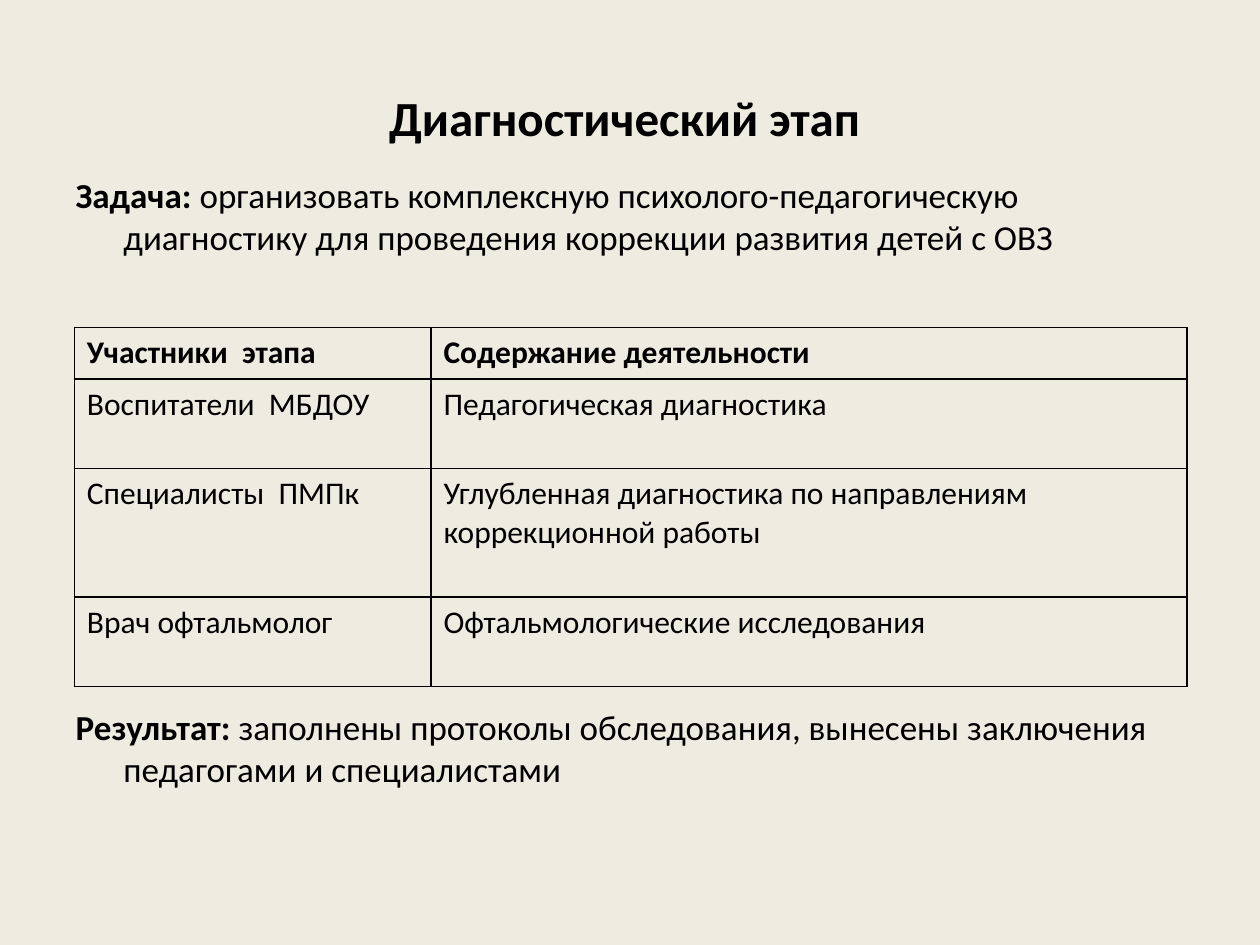
from lxml.etree import SubElement
from pptx import Presentation
from pptx.dml.color import RGBColor
from pptx.enum.text import MSO_ANCHOR, MSO_AUTO_SIZE, PP_ALIGN
from pptx.oxml.ns import qn
from pptx.util import Inches, Pt

INK = RGBColor(0x00, 0x00, 0x00)
PAPER = RGBColor(0xEE, 0xEC, 0xE1)
FONT = "Calibri"

TITLE = "Диагностический этап "
NOTES = [
    ("Задача: ", "организовать комплексную психолого-педагогическую "
     "диагностику для проведения коррекции развития детей с ОВЗ"),
    ("Результат: ", "заполнены протоколы обследования, вынесены заключения "
     "педагогами и специалистами"),
]
ROWS = [
    ("Участники  этапа", "Содержание деятельности"),
    ("Воспитатели  МБДОУ", "Педагогическая диагностика"),
    ("Специалисты  ПМПк",
     "Углубленная диагностика по направлениям коррекционной работы"),
    ("Врач офтальмолог", "Офтальмологические исследования"),
]
WIDTHS = (2.83, 6)
HEIGHTS = (0.41, 0.71, 1.02, 0.71)


def write(para, text, size=18, bold=False):
    """Add a formatted run to a paragraph."""
    run = para.add_run()
    run.text = text
    font = run.font
    font.name, font.size, font.bold = FONT, Pt(size), bold
    font.color.rgb = INK


def place(shape, box):
    shape.left, shape.top, shape.width, shape.height = map(Inches, box)
    frame = shape.text_frame
    frame.word_wrap = True
    frame.auto_size = MSO_AUTO_SIZE.NONE
    return frame


def head(shape, box):
    frame = place(shape, box)
    frame.vertical_anchor = MSO_ANCHOR.MIDDLE
    para = frame.paragraphs[0]
    para.alignment = PP_ALIGN.CENTER
    write(para, TITLE, size=28, bold=True)


def body(shape, box, gap):
    """Task above the table and result below it, with hanging indents."""
    frame = place(shape, box)
    for i, (label, text) in enumerate(NOTES):
        para = frame.add_paragraph() if i else frame.paragraphs[0]
        para.space_before = Pt(gap if i else 4)
        props = para._p.get_or_add_pPr()
        props.set("marL", str(Inches(0.38)))
        props.set("indent", str(-Inches(0.38)))
        SubElement(props, qn("a:buNone"))
        write(para, label, size=20, bold=True)
        write(para, text, size=20)


def border(cell):
    props = cell._tc.get_or_add_tcPr()
    for side in ("lnL", "lnR", "lnT", "lnB"):
        line = SubElement(props, qn("a:" + side), w=str(Pt(1)))
        fill = SubElement(line, qn("a:solidFill"))
        SubElement(fill, qn("a:srgbClr"), val=str(INK))


def grid(slide, left, top):
    size = map(Inches, (left, top, sum(WIDTHS), sum(HEIGHTS)))
    table = slide.shapes.add_table(len(ROWS), len(WIDTHS), *size).table
    table.first_row = table.horz_banding = False
    for col, width in zip(table.columns, WIDTHS):
        col.width = Inches(width)
    for r, (row, height) in enumerate(zip(table.rows, HEIGHTS)):
        row.height = Inches(height)
        for cell, text in zip(row.cells, ROWS[r]):
            border(cell)
            cell.fill.background()
            write(cell.text_frame.paragraphs[0], text, bold=r == 0)


def main():
    deck = Presentation()
    deck.slide_width, deck.slide_height = Inches(10), Inches(7.5)
    slide = deck.slides.add_slide(deck.slide_layouts[1])
    fill = slide.background.fill
    fill.solid()
    fill.fore_color.rgb = PAPER

    # Title, then the two notes with the table between them
    head(slide.shapes.title, (0.5, 0.3, 9, 1.25))
    body(slide.placeholders[1], (0.5, 1.33, 9, 5.37), gap=256)
    grid(slide, 0.59, 2.6)
    deck.save("out.pptx")


if __name__ == "__main__":
    main()
